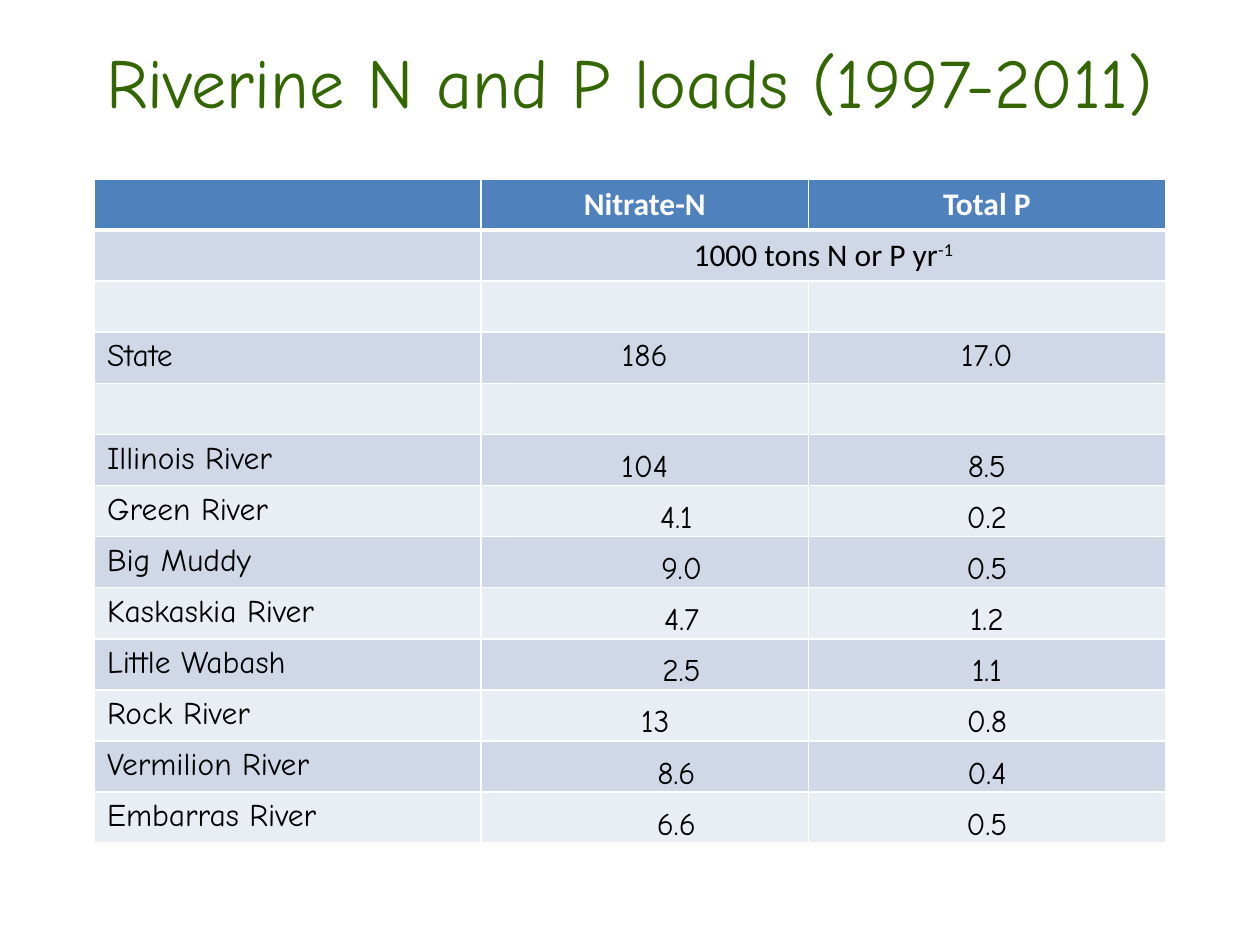
from dataclasses import dataclass

from lxml import etree
from pptx import Presentation
from pptx.dml.color import RGBColor
from pptx.enum.text import MSO_ANCHOR, PP_ALIGN
from pptx.oxml.ns import qn
from pptx.util import Pt

LEFT, CENTER = PP_ALIGN.LEFT, PP_ALIGN.CENTER
TOP, MIDDLE, BOTTOM = MSO_ANCHOR.TOP, MSO_ANCHOR.MIDDLE, MSO_ANCHOR.BOTTOM


@dataclass(frozen=True)
class Theme:
    title: str = "336600"
    header: str = "4F81BD"
    bands: tuple = ("D0D8E8", "E9EDF4")
    line: str = "FFFFFF"
    header_text: str = "FFFFFF"
    text: str = "000000"
    hand_font: str = "Comic Neue"
    plain_font: str = "Calibri"
    title_size: float = 40
    body_size: float = 18


THEME = Theme()
COL_WIDTHS = (221, 187, 204)
ROW_HEIGHT = 29.2
HEADERS = ("", "Nitrate-N", "Total P")
STATE = ("State", "186", "17.0")
UNIT_ROW, STATE_ROW, FIRST_RIVER_ROW = 1, 3, 5
# River, nitrate-N, extra left inset of the nitrate value, total P
RIVERS = (
    ("Illinois River", "104", 0, "8.5"),
    ("Green River", "4.1", 36, "0.2"),
    ("Big Muddy", "9.0", 42, "0.5"),
    ("Kaskaskia River", "4.7", 42, "1.2"),
    ("Little Wabash", "2.5", 42, "1.1"),
    ("Rock River", "13", 12, "0.8"),
    ("Vermilion River", "8.6", 36, "0.4"),
    ("Embarras River", "6.6", 36, "0.5"),
)


def add_text(tf, text, font=THEME.hand_font, size=THEME.body_size,
             color=THEME.text, bold=False, align=LEFT, superscript=False):
    """Append a formatted run to the first paragraph."""
    p = tf.paragraphs[0]
    p.alignment = align
    r = p.add_run()
    r.text = text
    r.font.name = font
    r.font.size = Pt(size)
    r.font.bold = bold
    r.font.color.rgb = RGBColor.from_string(color)
    if superscript:
        r._r.get_or_add_rPr().set("baseline", "30000")


def add_title(s, text):
    tf = s.shapes.add_textbox(Pt(5.76), Pt(18), Pt(708), Pt(56)).text_frame
    tf.word_wrap = True
    tf.vertical_anchor = MIDDLE
    add_text(tf, text, size=THEME.title_size, color=THEME.title, align=CENTER)


def set_border(cell, side, width):
    ln = etree.SubElement(cell._tc.get_or_add_tcPr(), qn(f"a:ln{side}"),
                          w=str(Pt(width)))
    fill = etree.SubElement(ln, qn("a:solidFill"))
    etree.SubElement(fill, qn("a:srgbClr"), val=THEME.line)


def style_cell(cell, row):
    """Draw the borders, heavier under the header, and the banded fill."""
    widths = {"L": 1, "R": 1, "T": 3 if row == 1 else 1, "B": 3 if row == 0 else 1}
    for side, width in widths.items():
        set_border(cell, side, width)
    color = THEME.bands[(row - 1) % 2] if row else THEME.header
    cell.fill.solid()
    cell.fill.fore_color.rgb = RGBColor.from_string(color)


def add_river_value(cell, text, indent=0):
    cell.vertical_anchor = BOTTOM
    cell.margin_left = Pt(0.72 + indent)
    cell.margin_right = cell.margin_top = Pt(0.72)
    cell.margin_bottom = 0
    add_text(cell.text_frame, text, align=CENTER)


def add_load_table(s):
    n_rows = FIRST_RIVER_ROW + len(RIVERS)
    table = s.shapes.add_table(n_rows, len(COL_WIDTHS), Pt(54), Pt(102.24),
                               Pt(sum(COL_WIDTHS)), Pt(ROW_HEIGHT * n_rows)).table
    for column, width in zip(table.columns, COL_WIDTHS):
        column.width = Pt(width)
    for i, row in enumerate(table.rows):
        row.height = Pt(ROW_HEIGHT)
        for cell in row.cells:
            style_cell(cell, i)

    for j, text in enumerate(HEADERS):
        if text:
            add_text(table.cell(0, j).text_frame, text, font=THEME.plain_font,
                     color=THEME.header_text, bold=True, align=CENTER)

    unit = table.cell(UNIT_ROW, 1)
    unit.merge(table.cell(UNIT_ROW, 2))
    for text, raised in (("1000 tons N or P yr", False), ("-1", True)):
        add_text(unit.text_frame, text, font=THEME.plain_font, align=CENTER,
                 superscript=raised)

    for j, text in enumerate(STATE):
        add_text(table.cell(STATE_ROW, j).text_frame, text,
                 align=CENTER if j else LEFT)

    for i, (river, nitrate, indent, phosphorus) in enumerate(RIVERS, FIRST_RIVER_ROW):
        add_text(table.cell(i, 0).text_frame, river)
        add_river_value(table.cell(i, 1), nitrate, indent)
        add_river_value(table.cell(i, 2), phosphorus)


def main():
    prs = Presentation()
    prs.slide_width, prs.slide_height = Pt(720), Pt(540)
    s = prs.slides.add_slide(prs.slide_layouts[6])
    add_title(s, "Riverine N and P loads (1997-2011)")
    add_load_table(s)
    prs.save("out.pptx")


if __name__ == "__main__":
    main()
